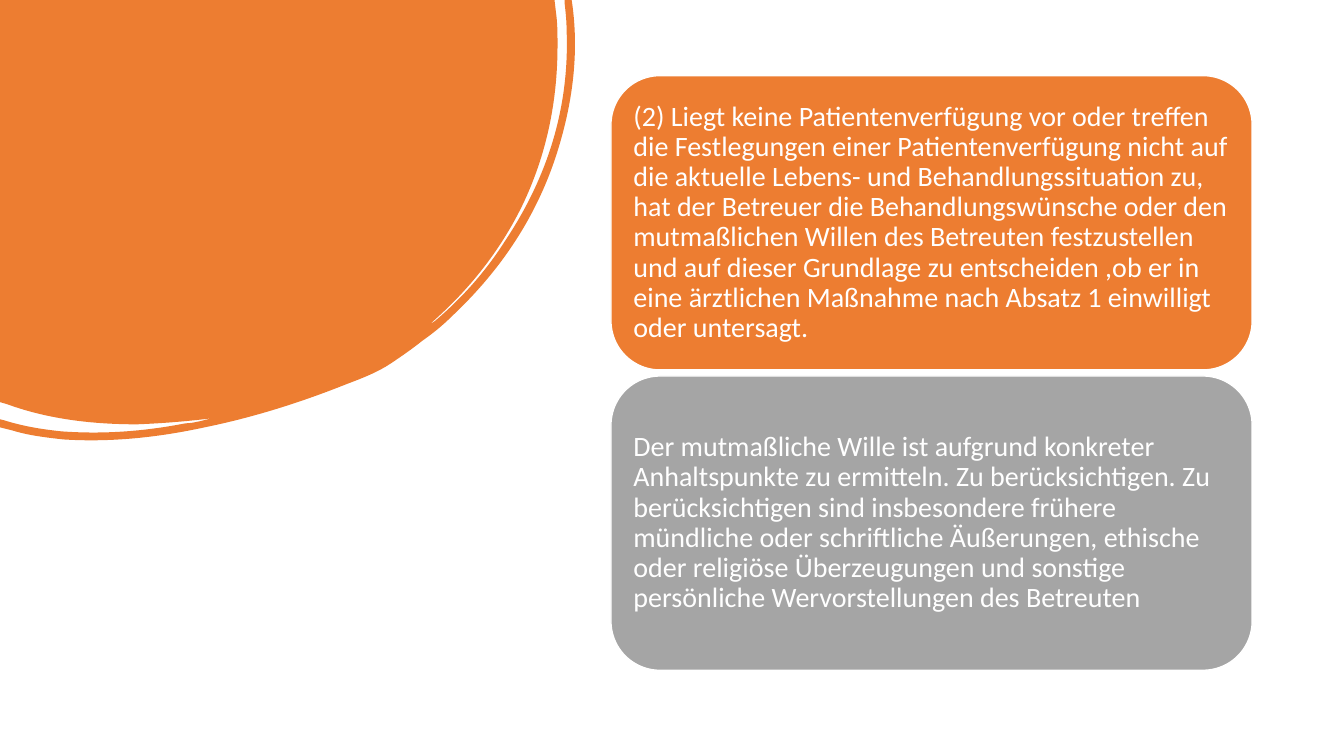
"""Build a slide with a curved corner ornament and two rounded text panels."""
import lxml.etree
import pptx
import pptx.dml.color
import pptx.enum.shapes
import pptx.enum.text
import pptx.oxml.ns
import pptx.util

Inches = pptx.util.Inches
ORANGE, GRAY, WHITE = "ED7D31", "A5A5A5", "FFFFFF"
UNITS_PER_INCH = 1000


def paint(color_format, hex_color):
    color_format.rgb = pptx.dml.color.RGBColor.from_string(hex_color)


def to_units(point):
    return tuple(round(value * UNITS_PER_INCH) for value in point)


deck = pptx.Presentation()
deck.slide_width, deck.slide_height = Inches(13.33), Inches(7.5)
page = deck.slides.add_slide(deck.slide_layouts[6])

ornament_segments = [
    [(5.5, 0)],
    [(5.52, 0.17)],
    [(5.53, 0.26), (5.53, 0.36), (5.53, 0.45)],
    [(5.53, 1.01), (5.42, 1.54), (5.18, 2.04)],
    [(4.96, 2.49), (4.65, 2.88), (4.27, 3.21)],
    [(4.29, 3.21), (4.3, 3.19), (4.32, 3.18)],
    [(4.59, 2.95), (4.82, 2.69), (5.01, 2.39)],
    [(5.43, 1.76), (5.65, 1.07), (5.62, 0.3)],
    [(5.62, 0.21), (5.61, 0.12), (5.6, 0.03)],
    [(5.6, 0)],
    [(5.67, 0)],
    [(5.68, 0.07)],
    [(5.74, 0.54), (5.68, 1.02), (5.53, 1.5)],
    [(5.33, 2.14), (4.97, 2.68), (4.48, 3.14)],
    [(4.39, 3.23), (4.29, 3.31), (4.19, 3.38)],
    [(4.09, 3.46), (3.99, 3.53), (3.87, 3.61)],
    [(3.75, 3.69), (3.6, 3.75), (3.44, 3.81)],
    [(2.99, 3.99), (2.52, 4.14), (2.03, 4.24)],
    [(1.57, 4.34), (1.1, 4.39), (0.63, 4.36)],
    [(0.45, 4.34), (0.28, 4.32), (0.12, 4.27)],
    [(0, 4.24)],
    [(0, 4.16)],
    [(0.04, 4.17)],
    [(0.23, 4.23), (0.42, 4.26), (0.61, 4.28)],
    [(1.03, 4.31), (1.43, 4.28), (1.84, 4.2)],
    [(1.89, 4.2), (1.93, 4.19), (1.98, 4.18)],
    [(2.02, 4.17), (2.06, 4.16), (2.1, 4.15)],
    [(1.86, 4.18), (1.61, 4.2), (1.36, 4.21)],
    [(0.92, 4.21), (0.48, 4.16), (0.07, 4.01)],
    [(0, 3.99)],
]
builder = page.shapes.build_freeform(0, 0, scale=Inches(1) / UNITS_PER_INCH)
builder.add_line_segments([to_units(segment[-1]) for segment in ornament_segments], close=True)
ornament = builder.convert_to_shape()
ornament.shadow.inherit = False
ornament.fill.solid()
paint(ornament.fill.fore_color, ORANGE)
ornament.line.fill.background()

ornament_size = (5.71, 4.37)
ornament.width, ornament.height = (Inches(length) for length in ornament_size)
qn = pptx.oxml.ns.qn
outline = next(ornament.element.iter(qn("a:path")))
for side, length in zip("wh", to_units(ornament_size)):
    outline.set(side, str(length))
for line_step, segment in zip(outline.findall(qn("a:lnTo")), ornament_segments):
    if len(segment) == 3:
        curve = lxml.etree.Element(qn("a:cubicBezTo"))
        for x, y in map(to_units, segment):
            lxml.etree.SubElement(curve, qn("a:pt"), x=str(x), y=str(y))
        outline.replace(line_step, curve)

panels = [
    (ORANGE, "(2) Liegt keine Patientenverfügung vor oder treffen die Festlegungen einer "
             "Patientenverfügung nicht auf die aktuelle Lebens- und Behandlungssituation zu, "
             "hat der Betreuer die Behandlungswünsche oder den mutmaßlichen Willen des Betreuten "
             "festzustellen und auf dieser Grundlage zu entscheiden ,ob er in eine ärztlichen "
             "Maßnahme nach Absatz 1 einwilligt oder untersagt."),
    (GRAY, "Der mutmaßliche Wille ist aufgrund konkreter Anhaltspunkte zu ermitteln. "
           "Zu berücksichtigen. Zu berücksichtigen sind insbesondere frühere mündliche oder "
           "schriftliche Äußerungen, ethische oder religiöse Überzeugungen und sonstige "
           "persönliche Wervorstellungen des Betreuten"),
]
frame_format = {
    "word_wrap": True,
    "vertical_anchor": pptx.enum.text.MSO_ANCHOR.MIDDLE,
    "margin_left": Inches(0.08),
    "margin_right": Inches(0.08),
    "margin_top": Inches(0.08),
    "margin_bottom": Inches(0.08),
}
para_format = {"alignment": pptx.enum.text.PP_ALIGN.LEFT, "line_spacing": 0.9}
font_format = {"name": "Calibri", "size": pptx.util.Pt(20)}

for index, (fill_color, wording) in enumerate(panels):
    panel = page.shapes.add_shape(
        pptx.enum.shapes.MSO_SHAPE.ROUNDED_RECTANGLE,
        Inches(6.06), Inches(0.75 + 2.98 * index), Inches(6.36), Inches(2.92))
    panel.shadow.inherit = False
    panel.fill.solid()
    paint(panel.fill.fore_color, fill_color)
    paint(panel.line.color, WHITE)
    panel.line.width = pptx.util.Pt(1)
    para = panel.text_frame.paragraphs[0]
    span = para.add_run()
    span.text = wording
    paint(span.font.color, WHITE)
    for target, values in ((panel.text_frame, frame_format), (para, para_format),
                           (span.font, font_format)):
        for name, value in values.items():
            setattr(target, name, value)

deck.save("out.pptx")
